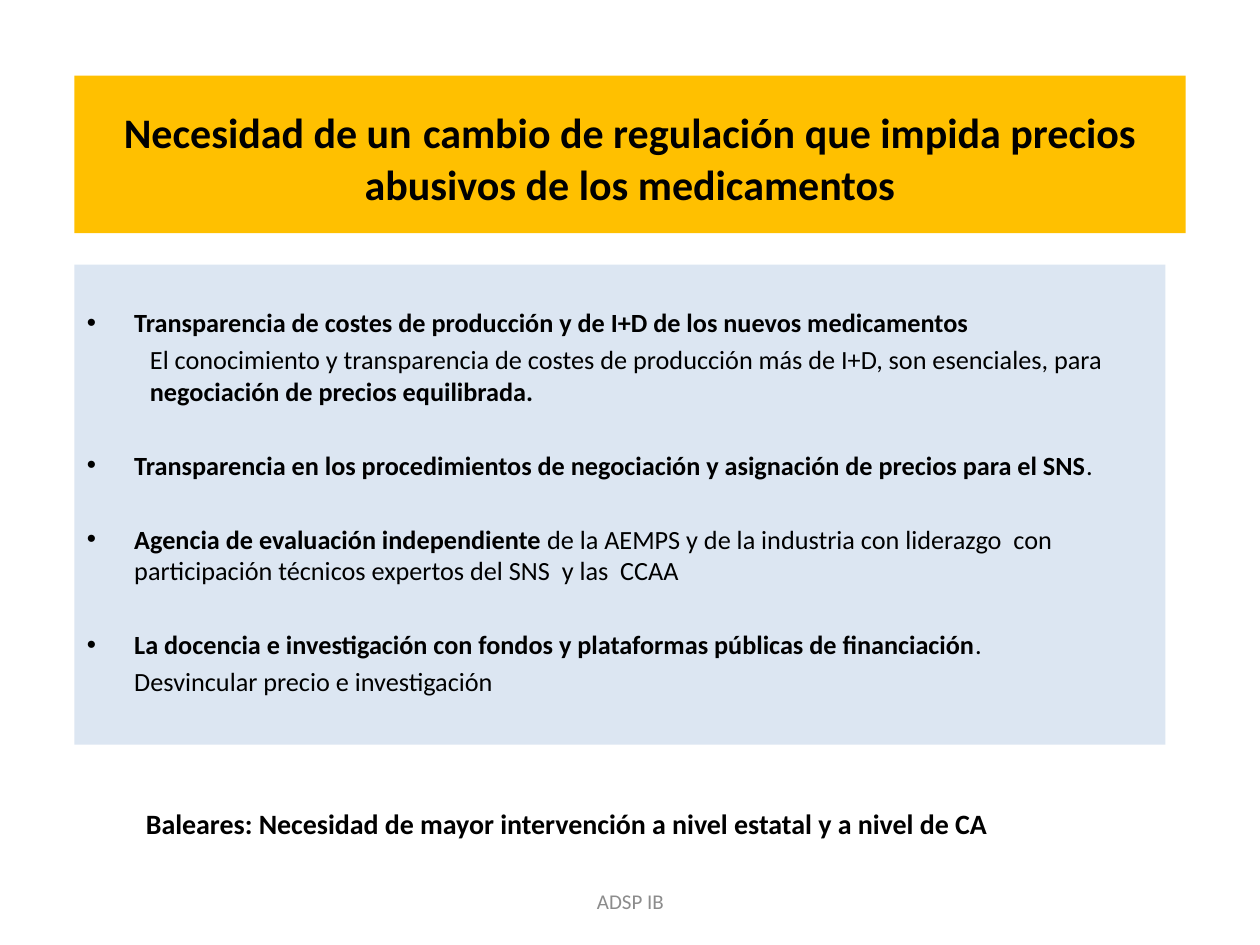
from lxml import etree
from pptx import Presentation
from pptx.dml.color import RGBColor
from pptx.enum.text import MSO_ANCHOR, MSO_AUTO_SIZE, PP_ALIGN
from pptx.oxml.ns import qn
from pptx.util import Pt

MIDDLE, TOP = MSO_ANCHOR.MIDDLE, MSO_ANCHOR.TOP
CENTER, LEFT = PP_ALIGN.CENTER, PP_ALIGN.LEFT
NO_FIT = MSO_AUTO_SIZE.NONE

FONT = "Calibri"
COLORS = {"title": "FFC000", "panel": "DCE6F2", "text": "000000", "footer": "8C8C8C"}

TITLE_BOX = (42.5, 43.2, 635, 90)
PANEL_BOX = (42.5, 151.2, 623.5, 274.3)
CLOSING_BOX = (76.3, 457.2, 561.6, 26.6)
FOOTER_BOX = (246.2, 500.4, 228.2, 28.8)

BODY_SIZE = 15
LINE_GAP, GROUP_GAP = 3, 24.3
BULLET_INDENT, SUB_INDENT = 27, 36

# Each group: bulleted runs, then the indent and runs of an optional second line.
# Runs are (text, bold).
GROUPS = [
    ([("Transparencia de costes de producción y de I+D de los nuevos medicamentos", True)],
     SUB_INDENT,
     [("El conocimiento y transparencia de costes de producción más de I+D, "
       "son esenciales, para ", False),
      ("negociación de precios equilibrada.", True)]),
    ([("Transparencia en los procedimientos de negociación y asignación de precios "
       "para el SNS", True), (".", False)], 0, []),
    ([("Agencia de evaluación independiente ", True),
      ("de la AEMPS y de la industria con liderazgo  con participación técnicos "
       "expertos del SNS  y las  CCAA", False)], 0, []),
    ([("La docencia e investigación con fondos y plataformas públicas de financiación",
       True), (".", False)],
     BULLET_INDENT, [("Desvincular precio e investigación", False)]),
]


def add_run(p, text, size=BODY_SIZE, bold=False, color="text"):
    r = p.add_run()
    r.text = text
    r.font.name = FONT
    r.font.size = Pt(size)
    r.font.bold = bold
    r.font.color.rgb = RGBColor.from_string(COLORS[color])


def place(sp, box, anchor=TOP, fill=None):
    """Set box, fill and frame options; return the text frame."""
    sp.left, sp.top, sp.width, sp.height = map(Pt, box)
    if fill:
        sp.fill.solid()
        sp.fill.fore_color.rgb = RGBColor.from_string(COLORS[fill])
    tf = sp.text_frame
    tf.word_wrap = True
    tf.auto_size = NO_FIT
    tf.vertical_anchor = anchor
    return tf


def format_item(p, before, left, bullet=False):
    p.alignment = LEFT
    p.space_before = Pt(before)
    pPr = p._p.get_or_add_pPr()
    pPr.set("marL", str(Pt(left)))
    pPr.set("indent", str(Pt(-left if bullet else 0)))
    if bullet:
        etree.SubElement(pPr, qn("a:buFont")).set("typeface", "Arial")
        etree.SubElement(pPr, qn("a:buChar")).set("char", "•")
    else:
        etree.SubElement(pPr, qn("a:buNone"))


def fill_title(sp, box):
    p = place(sp, box, MIDDLE, "title").paragraphs[0]
    p.alignment = CENTER
    add_run(p, "Necesidad de un", size=24, bold=True)
    add_run(p, " ", size=28, bold=True)
    add_run(p, "cambio de regulación que impida precios abusivos de los medicamentos",
            size=24, bold=True)


def fill_panel(sp, box):
    tf = place(sp, box, TOP, "panel")
    tf.margin_top = Pt(24)
    for i, (heading, indent, detail) in enumerate(GROUPS):
        p = tf.add_paragraph() if i else tf.paragraphs[0]
        format_item(p, GROUP_GAP if i else 0, BULLET_INDENT, bullet=True)
        for text, bold in heading:
            add_run(p, text, bold=bold)
        if detail:
            p = tf.add_paragraph()
            format_item(p, LINE_GAP, indent)
            for text, bold in detail:
                add_run(p, text, bold=bold)


def add_label(slide, box, text, anchor=TOP, align=LEFT, **fmt):
    sp = slide.shapes.add_textbox(*map(Pt, box))
    p = place(sp, box, anchor).paragraphs[0]
    p.alignment = align
    add_run(p, text, **fmt)


def main():
    prs = Presentation()
    prs.slide_width, prs.slide_height = Pt(720), Pt(540)
    slide = prs.slides.add_slide(prs.slide_layouts[1])
    fill_title(slide.shapes.title, TITLE_BOX)
    fill_panel(slide.placeholders[1], PANEL_BOX)
    add_label(slide, CLOSING_BOX,
              "Baleares: Necesidad de mayor intervención a nivel estatal y a nivel de CA",
              size=16, bold=True)
    add_label(slide, FOOTER_BOX, "ADSP IB", anchor=MIDDLE, align=CENTER,
              size=12, color="footer")
    prs.save("out.pptx")


if __name__ == "__main__":
    main()
